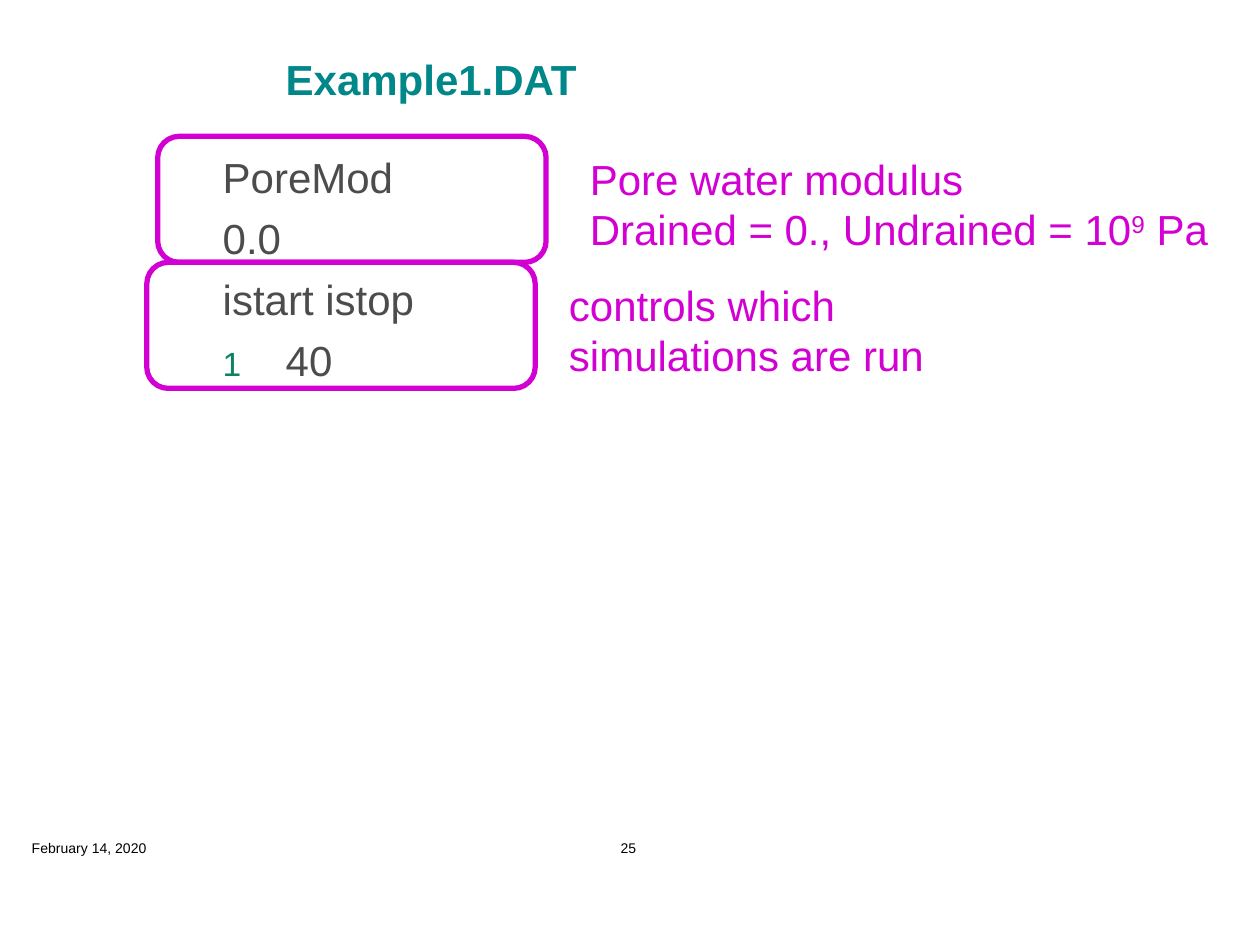
from pptx import Presentation, util as u
from pptx.dml.color import RGBColor
from pptx.enum import shapes, text
from pptx.oxml.ns import qn
from lxml import etree

THEME = {
    "font": "Arial",
    "heading": ("008789", 24),
    "listing": ("4C4C4C", 24),
    "remark": ("D200D2", 24),
    "footer": ("000000", 8),
    "number": "0C8164",
    "frame_width": 3,
}

HEADING = "Example1.DAT"
LISTING = ["PoreMod", "0.0", "istart istop", "40"]
GROUPS = [
    {
        "frame": (3.18, 2.75),
        "remark": (11.64, 2.96, 13.76, 2.32),
        "lines": [
            [("Pore water modulus", 0)],
            [("Drained = 0., Undrained = 10", 0), ("9", 30), (" Pa", 0)],
        ],
    },
    {
        "frame": (2.96, 5.29),
        "remark": (11.22, 5.5, 8.26, 2.32),
        "lines": [[("controls which simulations are run", 0)]],
    },
]
FRAME_SIZE = (7.83, 2.54)
FOOTERS = [
    ("February 14, 2020", (0.64, 16.92, 5.92, 0.36), text.PP_ALIGN.LEFT),
    ("25", (11.7, 16.92, 1.94, 0.36), text.PP_ALIGN.CENTER),
]
INSETS = (0.25, 0.13, 0.25, 0.13)


def cm(values):
    return [u.Cm(value) for value in values]


def write(slide, place, lines, role, insets=INSETS):
    frame = slide.shapes.add_textbox(*cm(place)).text_frame
    frame.word_wrap = True
    (frame.margin_left, frame.margin_top,
     frame.margin_right, frame.margin_bottom) = cm(insets)
    color, size = THEME[role]
    for index, line in enumerate(lines):
        paragraph = frame.paragraphs[0] if index == 0 else frame.add_paragraph()
        for words, raised in line:
            run = paragraph.add_run()
            run.text = words
            run.font.name = THEME["font"]
            run.font.size = u.Pt(size)
            run.font.color.rgb = RGBColor.from_string(color)
            if raised:
                run.font._element.set("baseline", str(raised * 1000))
    return frame


def number(paragraph):
    properties = paragraph._p.get_or_add_pPr()
    properties.set("marL", str(u.Cm(1.27)))
    properties.set("indent", str(-u.Cm(1.27)))
    color = etree.SubElement(properties, qn("a:buClr"))
    etree.SubElement(color, qn("a:srgbClr"), val=THEME["number"])
    etree.SubElement(properties, qn("a:buSzPct"), val="80000")
    etree.SubElement(properties, qn("a:buFont"), typeface=THEME["font"])
    etree.SubElement(properties, qn("a:buAutoNum"), type="arabicPlain")


def add_frame(slide, corner):
    frame = slide.shapes.add_shape(
        shapes.MSO_SHAPE.ROUNDED_RECTANGLE, *cm(corner + FRAME_SIZE))
    frame.adjustments[0] = 0.17
    frame.shadow.inherit = False
    frame.fill.background()
    frame.line.color.rgb = RGBColor.from_string(THEME["remark"][0])
    frame.line.width = u.Pt(THEME["frame_width"])


def main():
    """Build the slide that explains the Example1.DAT input file."""
    deck = Presentation()
    deck.slide_width, deck.slide_height = u.Cm(25.4), u.Cm(19.05)
    slide = deck.slides.add_slide(deck.slide_layouts[6])

    heading = write(slide, (5.51, 0.64, 19.25, 1.9), [[(HEADING, 0)]], "heading")
    heading.vertical_anchor = text.MSO_ANCHOR.MIDDLE
    heading.paragraphs[0].runs[0].font.bold = True

    listing = write(slide, (4.24, 2.64, 15.24, 13.94),
                    [[(line, 0)] for line in LISTING], "listing",
                    (0.25, 0.41, 0.25, 0.13))
    number(listing.paragraphs[-1])
    for paragraph in listing.paragraphs[1:]:
        paragraph.space_before = u.Pt(6)

    for words, place, alignment in FOOTERS:
        footer = write(slide, place, [[(words, 0)]], "footer", (0, 0, 0, 0))
        footer.paragraphs[0].alignment = alignment

    for group in GROUPS:
        add_frame(slide, group["frame"])
        remark = write(slide, group["remark"], group["lines"], "remark")
        remark.auto_size = text.MSO_AUTO_SIZE.SHAPE_TO_FIT_TEXT

    deck.save("out.pptx")


if __name__ == "__main__":
    main()
